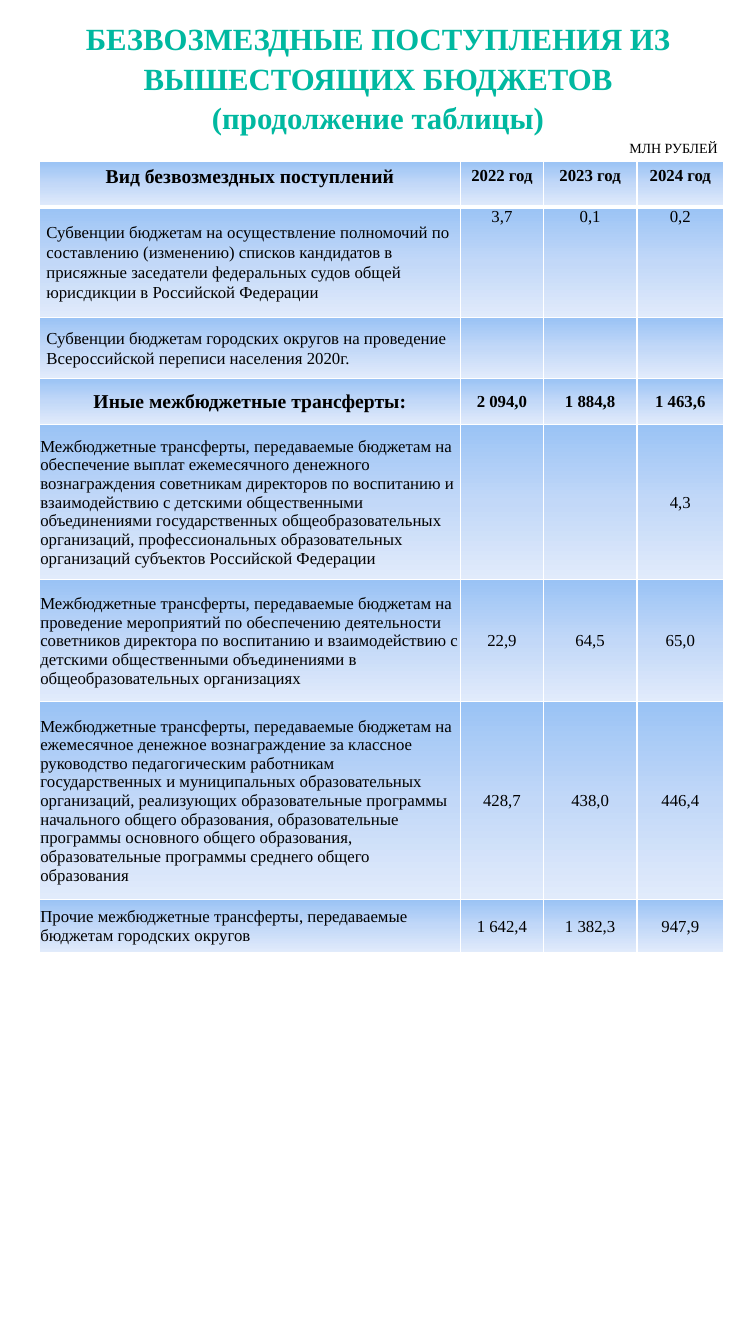
import pptx
import pptx.util
import pptx.dml.color
import pptx.enum.text
import pptx.oxml
import pptx.oxml.ns

Inches = pptx.util.Inches
Align = pptx.enum.text.PP_ALIGN
Anchor = pptx.enum.text.MSO_ANCHOR


def set_font(para, size, color, bold=False):
    para.font.name = "Times New Roman"
    para.font.size = pptx.util.Pt(size)
    para.font.bold = bold
    para.font.color.rgb = pptx.dml.color.RGBColor.from_string(color)


def style_cell(cell, bottom_width):
    namespace = pptx.oxml.ns.nsdecls("a")
    properties = cell._tc.get_or_add_tcPr()
    for side, width in (("L", 1), ("R", 1), ("T", 1), ("B", bottom_width)):
        properties.append(pptx.oxml.parse_xml(
            f'<a:ln{side} {namespace} w="{pptx.util.Pt(width)}"><a:solidFill>'
            f'<a:srgbClr val="FFFFFF"/></a:solidFill></a:ln{side}>'))
    stops = "".join(
        f'<a:gs pos="{position * 1000}"><a:srgbClr val="{color}"/></a:gs>'
        for position, color in ((0, "9AC3F5"), (50, "C2D8F8"), (100, "E1EBFB")))
    properties.append(pptx.oxml.parse_xml(
        f'<a:gradFill {namespace}><a:gsLst>{stops}</a:gsLst>'
        f'<a:lin ang="5400000" scaled="0"/></a:gradFill>'))


deck = pptx.Presentation()
deck.slide_width = Inches(7.5)
deck.slide_height = Inches(13.33)
page = deck.slides.add_slide(deck.slide_layouts[6])

unit_box = page.shapes.add_textbox(Inches(6), Inches(1.33), Inches(1.5), Inches(0.27))
unit_box.text_frame.word_wrap = True
unit_box.text_frame.margin_right = Inches(0.38)
unit_para = unit_box.text_frame.paragraphs[0]
unit_para.text = "МЛН РУБЛЕЙ"
unit_para.alignment = Align.RIGHT
set_font(unit_para, 10, "000000")

column_widths = [4.18, 0.82, 0.93, 0.86]
rows = [
    (0.45, "header", ["Вид безвозмездных поступлений", "2022 год", "2023 год", "2024 год"]),
    (1.1, "subvention", [
        "Субвенции бюджетам на осуществление полномочий по составлению (изменению) списков "
        "кандидатов в присяжные заседатели федеральных судов общей юрисдикции в Российской "
        "Федерации", "3,7", "0,1", "0,2"]),
    (0.6, "subvention", [
        "Субвенции бюджетам городских округов на проведение Всероссийской переписи "
        "населения 2020г.", "", "", ""]),
    (0.46, "total", ["Иные межбюджетные трансферты:", "2 094,0", "1 884,8", "1 463,6"]),
    (1.54, "transfer", [
        "Межбюджетные трансферты, передаваемые бюджетам на обеспечение выплат ежемесячного "
        "денежного вознаграждения советникам директоров по воспитанию и взаимодействию с "
        "детскими общественными объединениями государственных общеобразовательных "
        "организаций, профессиональных образовательных организаций субъектов Российской "
        "Федерации", "", "", "4,3"]),
    (1.21, "transfer", [
        "Межбюджетные трансферты, передаваемые бюджетам на проведение мероприятий по "
        "обеспечению деятельности советников директора по воспитанию и взаимодействию с "
        "детскими общественными объединениями в общеобразовательных организациях",
        "22,9", "64,5", "65,0"]),
    (1.96, "transfer", [
        "Межбюджетные трансферты, передаваемые бюджетам на ежемесячное денежное "
        "вознаграждение за классное руководство педагогическим работникам государственных "
        "и муниципальных образовательных организаций, реализующих образовательные программы "
        "начального общего образования, образовательные программы основного общего "
        "образования, образовательные программы среднего общего образования",
        "428,7", "438,0", "446,4"]),
    (0.53, "transfer", [
        "Прочие межбюджетные трансферты, передаваемые бюджетам городских округов",
        "1 642,4", "1 382,3", "947,9"]),
]
margins = {
    "header": (0.1, 0.05, 0.05),
    "subvention": (0.07, 0, 0),
    "total": (0.01, 0.01, 0),
    "transfer": (0.01, 0.01, 0),
}

table = page.shapes.add_table(
    len(rows), len(column_widths), Inches(0.39), Inches(1.6), Inches(6.79), Inches(7.85)).table
for column, width in zip(table.columns, column_widths):
    column.width = Inches(width)
for row_index, (height, kind, texts) in enumerate(rows):
    table.rows[row_index].height = Inches(height)
    emphasized = kind in ("header", "total")
    side, top, bottom = margins[kind]
    for column_index, text in enumerate(texts):
        is_name = column_index == 0
        cell = table.cell(row_index, column_index)
        cell.margin_left = cell.margin_right = Inches(side)
        cell.margin_top = Inches(top)
        cell.margin_bottom = Inches(bottom)
        at_top = kind == "header" or (kind == "subvention" and not is_name)
        cell.vertical_anchor = Anchor.TOP if at_top else Anchor.MIDDLE
        para = cell.text_frame.paragraphs[0]
        para.text = text
        para.alignment = Align.LEFT if is_name and not emphasized else Align.CENTER
        if kind == "subvention":
            para.line_spacing = 1.07
        set_font(para, 14 if is_name and emphasized else 12, "000000", emphasized)
        style_cell(cell, 3 if kind == "header" else 1)

title_box = page.shapes.add_textbox(Inches(0), Inches(0.13), Inches(7.5), Inches(1.26))
title_frame = title_box.text_frame
title_frame.word_wrap = True
title_frame.vertical_anchor = Anchor.MIDDLE
title_frame.text = "БЕЗВОЗМЕЗДНЫЕ ПОСТУПЛЕНИЯ ИЗ ВЫШЕСТОЯЩИХ БЮДЖЕТОВ\n(продолжение таблицы)"
for para in title_frame.paragraphs:
    para.alignment = Align.CENTER
    para.line_spacing = 1.07
    set_font(para, 22, "00B8A0", True)

deck.save("out.pptx")
